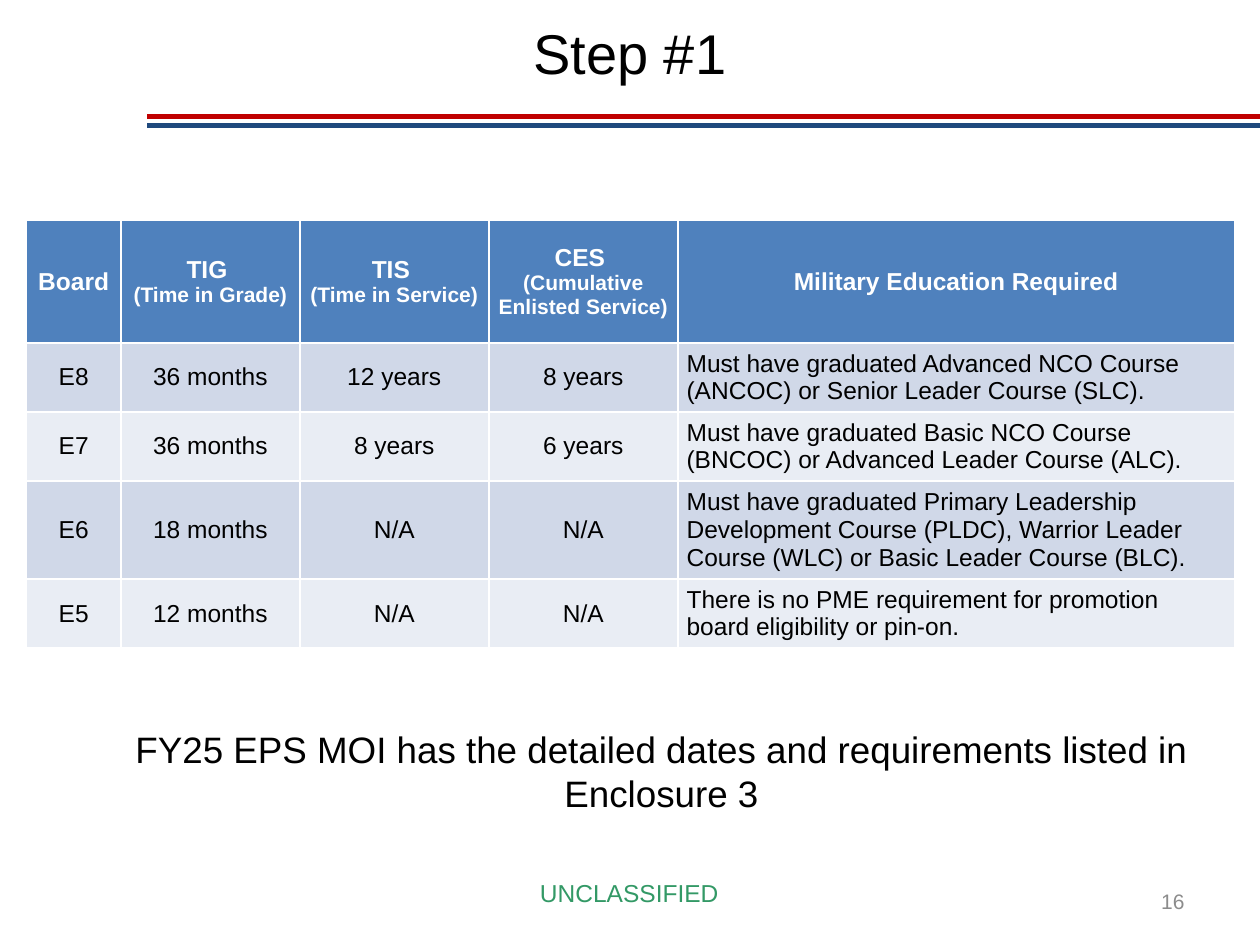
from lxml import etree
from pptx import Presentation, util as u
from pptx.dml import color
from pptx.enum import shapes, text
from pptx.oxml import ns

deck = Presentation()
deck.slide_width, deck.slide_height = u.Inches(10), u.Inches(7.5)
W, H = deck.slide_width, deck.slide_height
page = deck.slides.add_slide(deck.slide_layouts[6])
CENTER, LEFT, RIGHT = text.PP_ALIGN.CENTER, text.PP_ALIGN.LEFT, text.PP_ALIGN.RIGHT
MIDDLE, TOP = text.MSO_ANCHOR.MIDDLE, text.MSO_ANCHOR.TOP


def paint(target, value):
    target.rgb = color.RGBColor.from_string(value)


def write(para, lines, align, ink, bold=False):
    para.alignment = align
    for number, (words, size) in enumerate(lines):
        if number:
            para.add_line_break()
        span = para.add_run()
        span.text = words
        for name, value in {"name": "Arial", "size": u.Pt(size), "bold": bold}.items():
            setattr(span.font, name, value)
        paint(span.font.color, ink)


for height, ink in [(0.123, "C00000"), (0.133, "1F497D")]:
    stripe = page.shapes.add_connector(
        shapes.MSO_CONNECTOR.STRAIGHT, int(W * 0.117), int(H * height), W, int(H * height))
    stripe.line.width = u.Pt(3)
    paint(stripe.line.color, ink)
    etree.SubElement(stripe._element.spPr, ns.qn("a:effectLst"))

boxes = [
    ("UNCLASSIFIED", 14, "339966", CENTER, TOP, (0.358, 0.923, 0.283, 0.045), (0.1, 0.05), 0),
    ("FY25 EPS MOI has the detailed dates and requirements listed in Enclosure 3",
     21, "000000", CENTER, TOP, (0.021, 0.764, 0.958, 0.11), (0.04, 0.04), 0.05),
    ("Step #1", 32, "000000", CENTER, TOP, (0, 0.013, 1, 0.085), (0.1, 0.05), 0),
    ("16", 12, "8C8C8C", RIGHT, MIDDLE, (0.717, 0.927, 0.233, 0.053), (0.1, 0.05), 0),
]
for words, size, ink, align, anchor, (x, y, w, h), (side, edge), indent in boxes:
    box = page.shapes.add_textbox(int(W * x), int(H * y), int(W * w), int(H * h))
    frame = box.text_frame
    layout = {"word_wrap": True, "vertical_anchor": anchor,
              "margin_left": u.Inches(side), "margin_right": u.Inches(side),
              "margin_top": u.Inches(edge), "margin_bottom": u.Inches(edge)}
    for name, value in layout.items():
        setattr(frame, name, value)
    para = frame.paragraphs[0]
    if indent:
        para._p.get_or_add_pPr().set("marL", str(int(W * indent)))
    write(para, [(words, size)], align, ink)

header = [
    [("Board", 14)],
    [("TIG ", 14), ("(Time in Grade)", 12)],
    [("TIS ", 14), ("(Time in Service)", 12)],
    [("CES ", 14), ("(Cumulative Enlisted Service)", 12)],
    [("Military Education Required", 14)],
]
boards = [
    ("E8", "36 months", "12 years", "8 years",
     "Must have graduated Advanced NCO Course (ANCOC) or Senior Leader Course (SLC)."),
    ("E7", "36 months", "8 years", "6 years",
     "Must have graduated Basic NCO Course (BNCOC) or Advanced Leader Course (ALC)."),
    ("E6", "18 months", "N/A", "N/A",
     "Must have graduated Primary Leadership Development Course (PLDC), "
     "Warrior Leader Course (WLC) or Basic Leader Course (BLC)."),
    ("E5", "12 months", "N/A", "N/A",
     "There is no PME requirement for promotion board eligibility or pin-on."),
]
rows = [header] + [[[(words, 14)] for words in board] for board in boards]
widths = [0.075, 0.142, 0.15, 0.15, 0.442]
heights = [0.13, 0.072, 0.072, 0.103, 0.072]
table = page.shapes.add_table(
    len(rows), len(widths), int(W * 0.021), int(H * 0.233),
    int(W * sum(widths)), int(H * sum(heights))).table
for column, share in zip(table.columns, widths):
    column.width = int(W * share)
for r, (row, share) in enumerate(zip(rows, heights)):
    table.rows[r].height = int(H * share)
    fill = "4F81BD" if r == 0 else ("E9EDF4", "D0D8E8")[r % 2]
    for c, lines in enumerate(row):
        cell = table.cell(r, c)
        layout = {"vertical_anchor": MIDDLE,
                  "margin_left": u.Inches(0.07), "margin_right": u.Inches(0.07),
                  "margin_top": u.Inches(0.04), "margin_bottom": u.Inches(0.04)}
        for name, value in layout.items():
            setattr(cell, name, value)
        cell.fill.solid()
        paint(cell.fill.fore_color, fill)
        align = LEFT if r and c == len(row) - 1 else CENTER
        write(cell.text_frame.paragraphs[0], lines, align,
              "000000" if r else "FFFFFF", r == 0)

deck.save("out.pptx")
